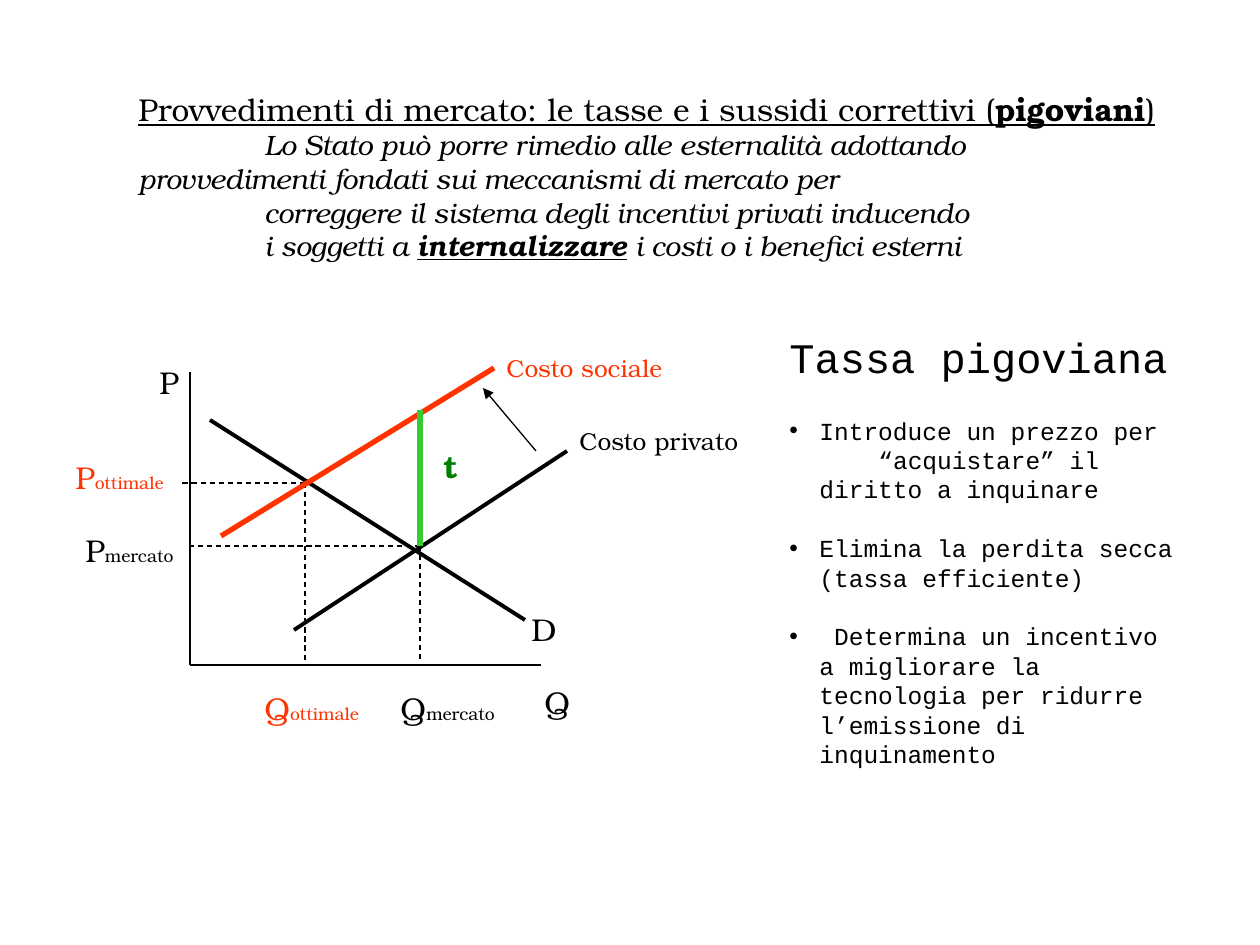
from dataclasses import dataclass
from typing import Any

import lxml.etree
import pptx
import pptx.dml.color
import pptx.enum.dml
import pptx.enum.shapes
import pptx.enum.text
import pptx.oxml.ns
import pptx.util

PX = 914400 / 126
BLACK = pptx.dml.color.RGBColor(0x00, 0x00, 0x00)
RED = pptx.dml.color.RGBColor(0xFF, 0x33, 0x00)
TAX_GREEN = pptx.dml.color.RGBColor(0x33, 0xCC, 0x33)
DARK_GREEN = pptx.dml.color.RGBColor(0x00, 0x80, 0x00)
SERIF = "TeX Gyre Bonum"
MONO = "Courier New"
BULLET_INDENT = 30
BULLET_GAP = 16.8
HEADING_TABS = (126, 882)


@dataclass
class Line:
    start: tuple[int, int]
    end: tuple[int, int]
    color: pptx.dml.color.RGBColor = BLACK
    width: float = 0.75
    dashed: bool = False
    arrow: bool = False


@dataclass
class Label:
    text: str
    left: int
    top: int
    width: int
    height: int = 50
    subscript: str = ""
    size: int = 18
    color: pptx.dml.color.RGBColor = BLACK
    bold: bool = False


MARKET = (420, 546)
OPTIMUM = (305, 483)
ORIGIN = (190, 665)
GUIDE_BOTTOM = 662

LINES = [
    Line(MARKET, (MARKET[0], GUIDE_BOTTOM), dashed=True),
    Line(MARKET, (189, MARKET[1]), dashed=True),
    Line((ORIGIN[0], 372), ORIGIN),
    Line(ORIGIN, (541, ORIGIN[1])),
    Line((210, 420), (525, 620), width=2.25),
    Line((294, 630), (567, 451), width=2.25),
    Line(OPTIMUM, (OPTIMUM[0], GUIDE_BOTTOM), dashed=True),
    Line(OPTIMUM, (179, OPTIMUM[1]), dashed=True),
    Line((221, 536), (494, 368), RED, 3),
    Line(MARKET, (MARKET[0], 410), TAX_GREEN, 3),
    Line((536, 451), (483, 388), arrow=True),
]

LABELS = [
    Label("D", 519, 604, 50),
    Label("Q", 388, 683, 120, subscript="mercato"),
    Label("P", 73, 525, 113, subscript="mercato"),
    Label("Q", 532, 677, 50),
    Label("P", 147, 357, 45),
    Label("Costo privato", 567, 420, 184, 42, size=14),
    Label("P", 63, 452, 113, subscript="ottimale", color=RED),
    Label("Q", 252, 683, 120, subscript="ottimale", color=RED),
    Label("Costo sociale", 494, 347, 181, 42, size=14, color=RED),
    Label("t", 431, 441, 40, color=DARK_GREEN, bold=True),
]

BULLETS = [
    "Introduce un prezzo per\v\t“acquistare” il diritto a inquinare",
    "Elimina la perdita secca (tassa efficiente)",
    " Determina un incentivo a migliorare la tecnologia per ridurre "
    "l’emissione di inquinamento",
]


def px(length: float) -> pptx.util.Emu:
    return pptx.util.Emu(round(length * PX))


def add_text(para: Any, text: str, *, size: float, font: str = SERIF,
             color: pptx.dml.color.RGBColor = BLACK, bold: bool = False,
             italic: bool = False, underline: bool = False) -> None:
    for index, part in enumerate(text.split("\v")):
        if index:
            para.add_line_break()
        span = para.add_run()
        span.text = part
        span.font.name = font
        span.font.size = pptx.util.Pt(size)
        span.font.color.rgb = color
        span.font.bold = bold
        span.font.italic = italic
        span.font.underline = underline


def add_box(page: Any, left: int, top: int, width: int, height: int,
            wrap: bool = True) -> Any:
    box = page.shapes.add_textbox(px(left), px(top), px(width), px(height))
    box.text_frame.word_wrap = wrap
    box.text_frame.auto_size = pptx.enum.text.MSO_AUTO_SIZE.SHAPE_TO_FIT_TEXT
    return box.text_frame


def add_line(page: Any, line: Line) -> None:
    connector = page.shapes.add_connector(
        pptx.enum.shapes.MSO_CONNECTOR.STRAIGHT,
        *(px(value) for value in line.start + line.end))
    connector.line.color.rgb = line.color
    connector.line.width = pptx.util.Pt(line.width)
    if line.dashed:
        connector.line.dash_style = pptx.enum.dml.MSO_LINE.DASH
    if line.arrow:
        lxml.etree.SubElement(connector.line._get_or_add_ln(),
                              pptx.oxml.ns.qn("a:tailEnd"), type="triangle")
    lxml.etree.SubElement(connector._element.spPr, pptx.oxml.ns.qn("a:effectLst"))


def add_label(page: Any, label: Label) -> None:
    para = add_box(page, label.left, label.top, label.width, label.height,
                   wrap=False).paragraphs[0]
    add_text(para, label.text, size=label.size, color=label.color, bold=label.bold)
    if label.subscript:
        add_text(para, label.subscript, size=10, color=label.color)


def set_bullet(para: Any) -> None:
    properties = para._p.get_or_add_pPr()
    properties.set("marL", str(px(BULLET_INDENT)))
    properties.set("indent", str(-px(BULLET_INDENT)))
    lxml.etree.SubElement(properties, pptx.oxml.ns.qn("a:buFont"), typeface="Arial")
    lxml.etree.SubElement(properties, pptx.oxml.ns.qn("a:buChar"), char="•")


def set_tabs(para: Any, *positions: int) -> None:
    stops = lxml.etree.SubElement(para._p.get_or_add_pPr(), pptx.oxml.ns.qn("a:tabLst"))
    for position in positions:
        lxml.etree.SubElement(stops, pptx.oxml.ns.qn("a:tab"),
                              pos=str(px(position)), algn="l")


def add_heading(page: Any) -> None:
    frame = add_box(page, 126, 84, 1050, 185)
    para = frame.paragraphs[0]
    add_text(para, "Provvedimenti di mercato: le tasse e i sussidi correttivi (",
             size=18, underline=True)
    add_text(para, "pigoviani", size=18, bold=True, underline=True)
    add_text(para, ")", size=18, underline=True)
    for text in ("\tLo Stato può porre rimedio alle esternalità adottando "
                 "\tprovvedimenti fondati sui meccanismi di mercato per",
                 "\tcorreggere il sistema degli incentivi privati inducendo",
                 "\ti soggetti a "):
        para = frame.add_paragraph()
        set_tabs(para, *HEADING_TABS)
        add_text(para, text, size=16, italic=True)
    add_text(para, "internalizzare", size=16, italic=True, bold=True, underline=True)
    add_text(para, " i costi o i benefici esterni", size=16, italic=True)


def add_tax_notes(page: Any) -> None:
    frame = add_box(page, 777, 325, 420, 449)
    add_text(frame.paragraphs[0], "Tassa pigoviana", size=24, font=MONO)
    for index, text in enumerate(BULLETS):
        para = frame.add_paragraph()
        para.space_before = pptx.util.Pt(BULLET_GAP if index else 19.4)
        set_bullet(para)
        if "\t" in text:
            set_tabs(para, 89)
        add_text(para, text, size=14, font=MONO)


def main() -> None:
    deck = pptx.Presentation()
    deck.slide_width, deck.slide_height = px(1260), px(945)
    page = deck.slides.add_slide(deck.slide_layouts[6])
    add_heading(page)
    for line in LINES:
        add_line(page, line)
    for label in LABELS:
        add_label(page, label)
    add_tax_notes(page)
    deck.save("out.pptx")


if __name__ == "__main__":
    main()
